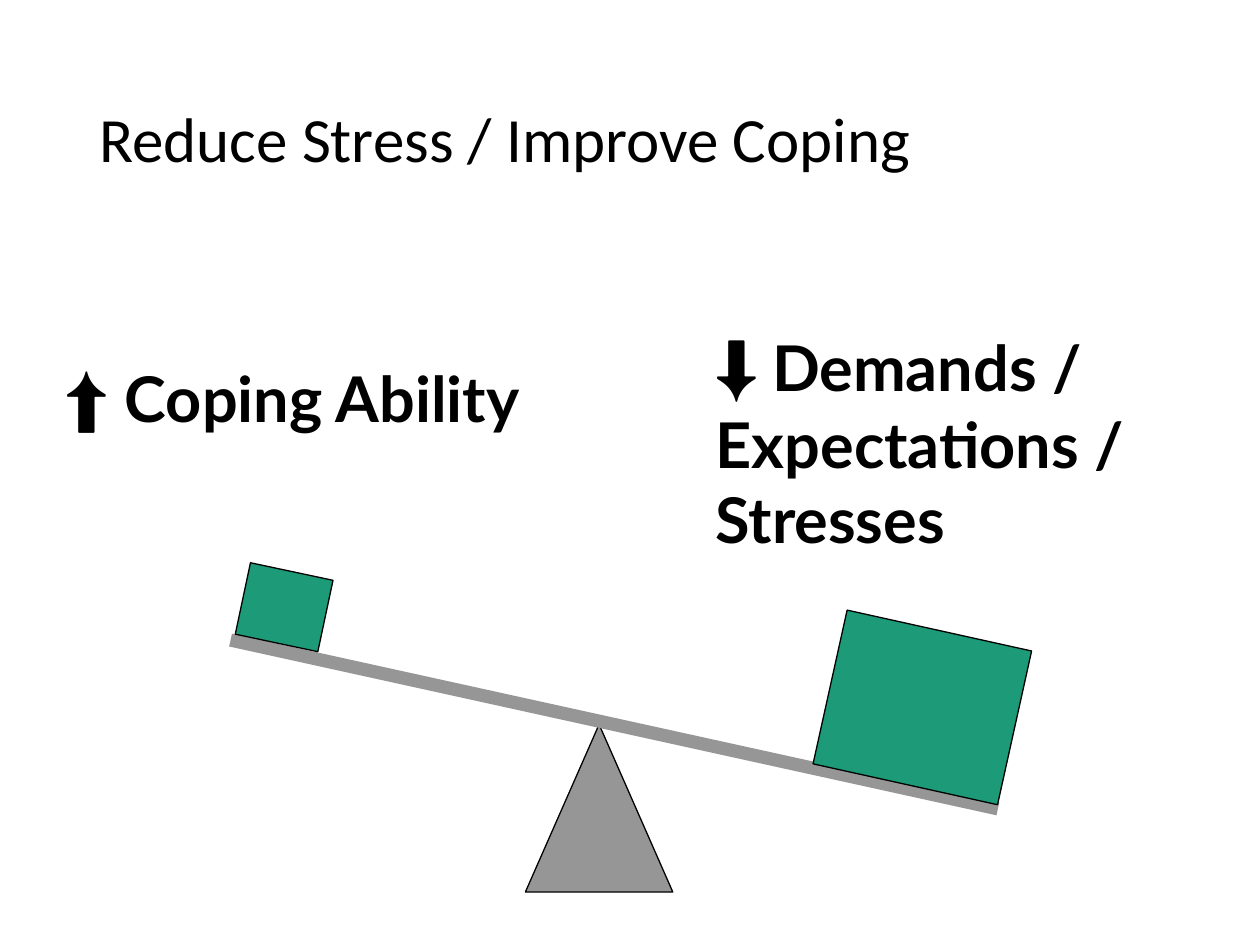
from lxml import etree
from pptx import Presentation
from pptx.dml.color import RGBColor
from pptx.enum.shapes import MSO_CONNECTOR, MSO_SHAPE
from pptx.enum.text import MSO_ANCHOR
from pptx.oxml.ns import qn
from pptx.util import Inches, Pt

BLACK = RGBColor(0x00, 0x00, 0x00)
GRAY = RGBColor(0x96, 0x96, 0x96)
GREEN = RGBColor(0x1D, 0x9A, 0x78)


def add_text(left, top, width, height, lines, bold=True, wrap=False):
    """Add a text box; each line is a list of (text, font, size) runs."""
    shape = slide.shapes.add_textbox(
        Inches(left), Inches(top), Inches(width), Inches(height))
    frame = shape.text_frame
    frame.word_wrap = wrap
    for index, runs in enumerate(lines):
        paragraph = frame.add_paragraph() if index else frame.paragraphs[0]
        paragraph.font.bold = bold
        paragraph.font.color.rgb = BLACK
        for text, font, size in runs:
            run = paragraph.add_run()
            run.text = text
            run.font.name = font
            run.font.size = Pt(size)
    return frame


def add_solid(kind, left, top, width, height, color, rotation=0):
    shape = slide.shapes.add_shape(
        kind, Inches(left), Inches(top), Inches(width), Inches(height))
    shape.rotation = rotation
    shape.shadow.inherit = False
    shape.fill.solid()
    shape.fill.fore_color.rgb = color
    shape.line.color.rgb = BLACK
    shape.line.width = Pt(0.75)


presentation = Presentation()
presentation.slide_width = Inches(10)
presentation.slide_height = Inches(7.5)
slide = presentation.slides.add_slide(presentation.slide_layouts[6])

# Title
title = add_text(0.69, 0.4, 8.62, 1.45,
                 [[("Reduce Stress / Improve Coping", "Calibri", 36)]],
                 bold=False, wrap=True)
title.vertical_anchor = MSO_ANCHOR.MIDDLE
title.paragraphs[0].line_spacing = 0.9

# Fulcrum and tilted beam
add_solid(MSO_SHAPE.ISOSCELES_TRIANGLE, 4.17, 5.75, 1.17, 1.33, GRAY)
beam = slide.shapes.add_connector(
    MSO_CONNECTOR.STRAIGHT,
    Inches(1.83), Inches(5.08), Inches(7.92), Inches(6.42))
beam.line.color.rgb = GRAY
beam.line.width = Pt(7.5)
etree.SubElement(beam._element.spPr, qn("a:effectLst"))

# Labels for the two sides
add_text(5.58, 2.5, 3.55, 1.97, [
    [("⬇", "Times New Roman", 40), (" ", "Times New Roman", 32),
     ("Demands /", "Lato", 36)],
    [("Expectations /", "Lato", 36)],
    [("Stresses", "Lato", 36)],
])
add_text(0.42, 2.75, 4.11, 0.77,
         [[("⬆ ", "Lato", 40), ("Coping Ability", "Lato", 36)]])

# Light and heavy weights
add_solid(MSO_SHAPE.RECTANGLE, 1.92, 4.53, 0.67, 0.58, GREEN, 12)
add_solid(MSO_SHAPE.RECTANGLE, 6.57, 4.99, 1.5, 1.25, GREEN, 12.5)

presentation.save("out.pptx")
